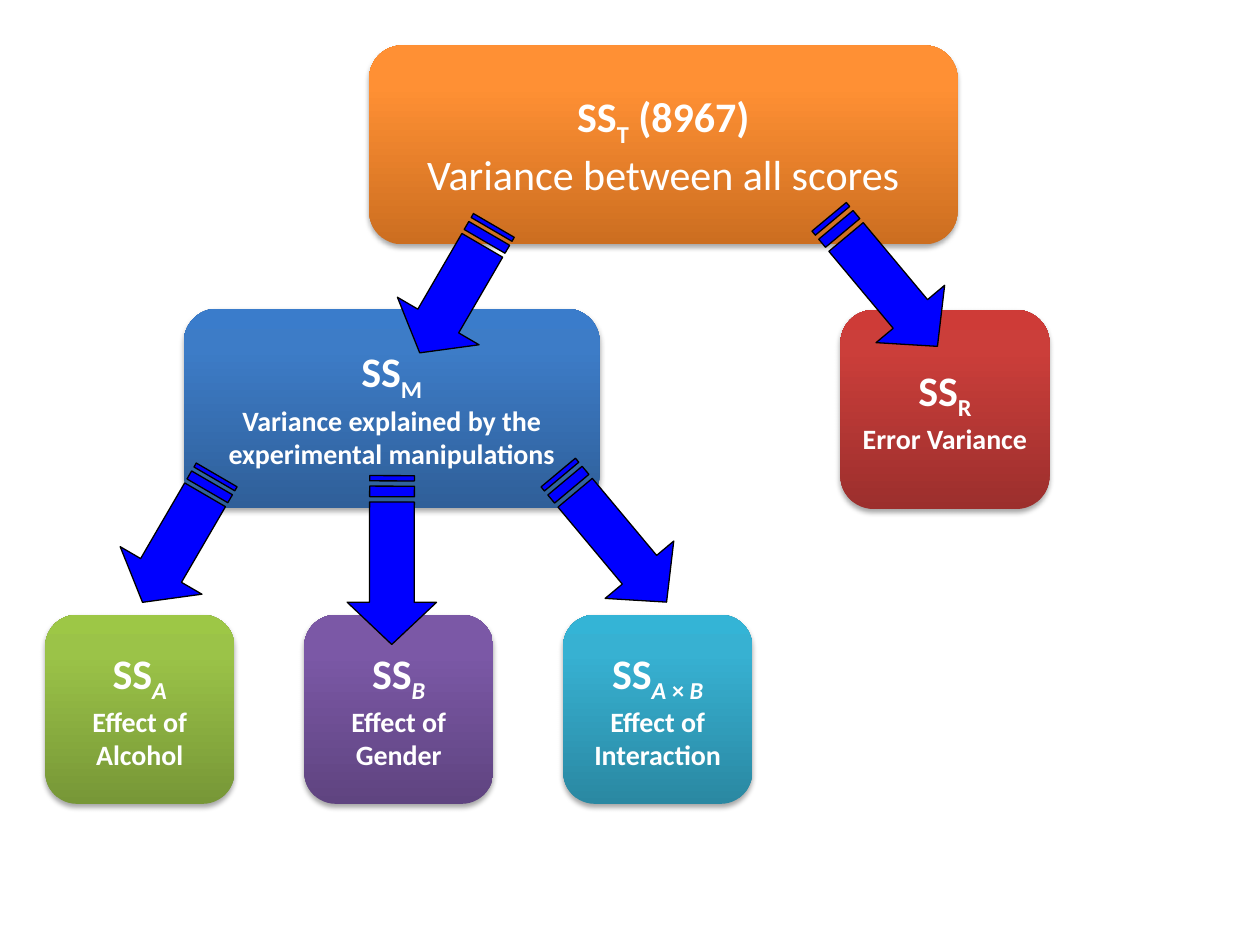
from lxml import etree
from pptx import Presentation
from pptx.dml.color import RGBColor
from pptx.enum.shapes import MSO_SHAPE as Shape
from pptx.enum.text import MSO_ANCHOR as Anchor, PP_ALIGN as Align
from pptx.oxml import parse_xml
from pptx.oxml.ns import nsdecls, qn
from pptx.util import Inches, Pt

WHITE = RGBColor(0xFF, 0xFF, 0xFF)
BLACK = RGBColor(0, 0, 0)
ARROW_BLUE = RGBColor(0, 0, 0xFF)

# Gradients from the bottom edge (0 %) over 80 % to the top edge (100 %)
STOPS = (0, 80, 100)


def shades(*codes):
    return [RGBColor.from_string(code) for code in codes]


ORANGE = shades("CC6E20", "FF9034", "FF9136")
BLUE = shades("2F5F99", "3D7CC7", "3A7CCB")
RED = shades("9C2F2D", "CB3E3A", "CE3B37")
GREEN = shades("779737", "9BC348", "9DC746")
PURPLE = shades("5F4480", "7B58A6", "7C57A8")
TEAL = shades("2A88A2", "37B1D2", "34B4D6")


def fill_gradient(box, colors):
    stops = "".join(
        f'<a:gs pos="{stop * 1000}"><a:srgbClr val="{color}"/></a:gs>'
        for stop, color in zip(STOPS, colors))
    gradient = parse_xml(
        f'<a:gradFill {nsdecls("a")} rotWithShape="1"><a:gsLst>{stops}</a:gsLst>'
        '<a:lin ang="16200000" scaled="0"/></a:gradFill>')
    box._element.spPr.find(qn("a:prstGeom")).addnext(gradient)


def add_soft_shadow(box):
    box.shadow.inherit = False
    effects = box._element.spPr.find(qn("a:effectLst"))
    shadow = etree.SubElement(effects, qn("a:outerShdw"), blurRad=str(Pt(3.1)),
                              dist=str(Pt(1.8)), dir="5400000", rotWithShape="0")
    color = etree.SubElement(shadow, qn("a:srgbClr"), val="000000")
    etree.SubElement(color, qn("a:alpha"), val="35000")


def add_run(paragraph, text, size, bold=True, italic=False, subscript=False):
    run = paragraph.add_run()
    run.text = text
    font = run.font
    font.name, font.size = "Calibri", Pt(size)
    font.bold, font.italic = bold, italic
    font.color.rgb = WHITE
    if subscript:
        run._r.get_or_add_rPr().set("baseline", "-25000")


def add_variance_box(slide, left, top, width, height, colors, subscripts,
                     meaning, value="", size=16, bold=True):
    """Box with an SS symbol above its meaning; subscripts are (text, italic)."""
    box = slide.shapes.add_shape(Shape.FLOWCHART_ALTERNATE_PROCESS, Inches(left),
                                 Inches(top), Inches(width), Inches(height))
    box.line.fill.background()
    fill_gradient(box, colors)
    add_soft_shadow(box)
    frame = box.text_frame
    frame.word_wrap = True
    frame.vertical_anchor = Anchor.MIDDLE
    symbol, description = frame.paragraphs[0], frame.add_paragraph()
    symbol.alignment = description.alignment = Align.CENTER
    add_run(symbol, "SS", 24)
    for text, italic in subscripts:
        add_run(symbol, text, 24, italic=italic, subscript=True)
    if value:
        add_run(symbol, value, 24)
    add_run(description, meaning, size, bold=bold)


def add_striped_arrow(slide, left, top, length, width, angle):
    """Right-pointing arrow with two tail stripes, turned by angle."""
    shaft = (0.25, 0.75)
    head = [(0.75, 0), (0.75, 0.25), (5 / 32, 0.25), (5 / 32, 0.75),
            (0.75, 0.75), (0.75, 1), (1, 0.5)]
    stripes = [[(start, shaft[0]), (end, shaft[0]), (end, shaft[1]), (start, shaft[1])]
               for start, end in ((1 / 16, 1 / 8), (0, 1 / 32))]
    builder = None
    for outline in [head] + stripes:
        points = [(Inches(left + x * length), Inches(top + y * width))
                  for x, y in outline]
        if builder is None:
            builder = slide.shapes.build_freeform(*points[0], scale=1.0)
        else:
            builder.move_to(*points[0])
        builder.add_line_segments(points[1:], close=True)
    arrow = builder.convert_to_shape()
    arrow.rotation = angle
    arrow.shadow.inherit = False
    arrow.fill.solid()
    arrow.fill.fore_color.rgb = ARROW_BLUE
    arrow.line.color.rgb = BLACK
    arrow.line.width = Pt(0.75)


def main():
    deck = Presentation()
    deck.slide_width, deck.slide_height = Inches(10), Inches(7.5)
    slide = deck.slides.add_slide(deck.slide_layouts[6])

    # Total variance, split into model and residual
    add_variance_box(slide, 2.93, 0.36, 4.67, 1.58, ORANGE, [("T", False)],
                     "Variance between all scores", " (8967)", 24, False)
    add_variance_box(slide, 1.46, 2.45, 3.3, 1.58, BLUE, [("M", False)],
                     "Variance explained by the experimental manipulations")
    add_striped_arrow(slide, 3.04, 1.92, 1.17, 0.75, 120.2)
    add_variance_box(slide, 6.67, 2.46, 1.66, 1.58, RED, [("R", False)],
                     "Error Variance")
    add_striped_arrow(slide, 6.34, 1.88, 1.34, 0.71, 50.1)

    # Model variance, split into its three effects
    effects = [
        (GREEN, [("A", True)], "Alcohol", (0.84, 3.9, 1.17, 0.75, 120.2)),
        (PURPLE, [("B", True)], "Gender", (4.19, 3.91, 1.34, 0.71, 50.1)),
        (TEAL, [("A ", True), ("× ", False), ("B", True)], "Interaction",
         (2.44, 4.09, 1.34, 0.71, 90.1)),
    ]
    for column, (colors, subscripts, effect, arrow) in enumerate(effects):
        add_variance_box(slide, 0.36 + column * 2.055, 4.88, 1.5, 1.5, colors,
                         subscripts, f"Effect of {effect}")
        add_striped_arrow(slide, *arrow)

    deck.save("out.pptx")


if __name__ == "__main__":
    main()
